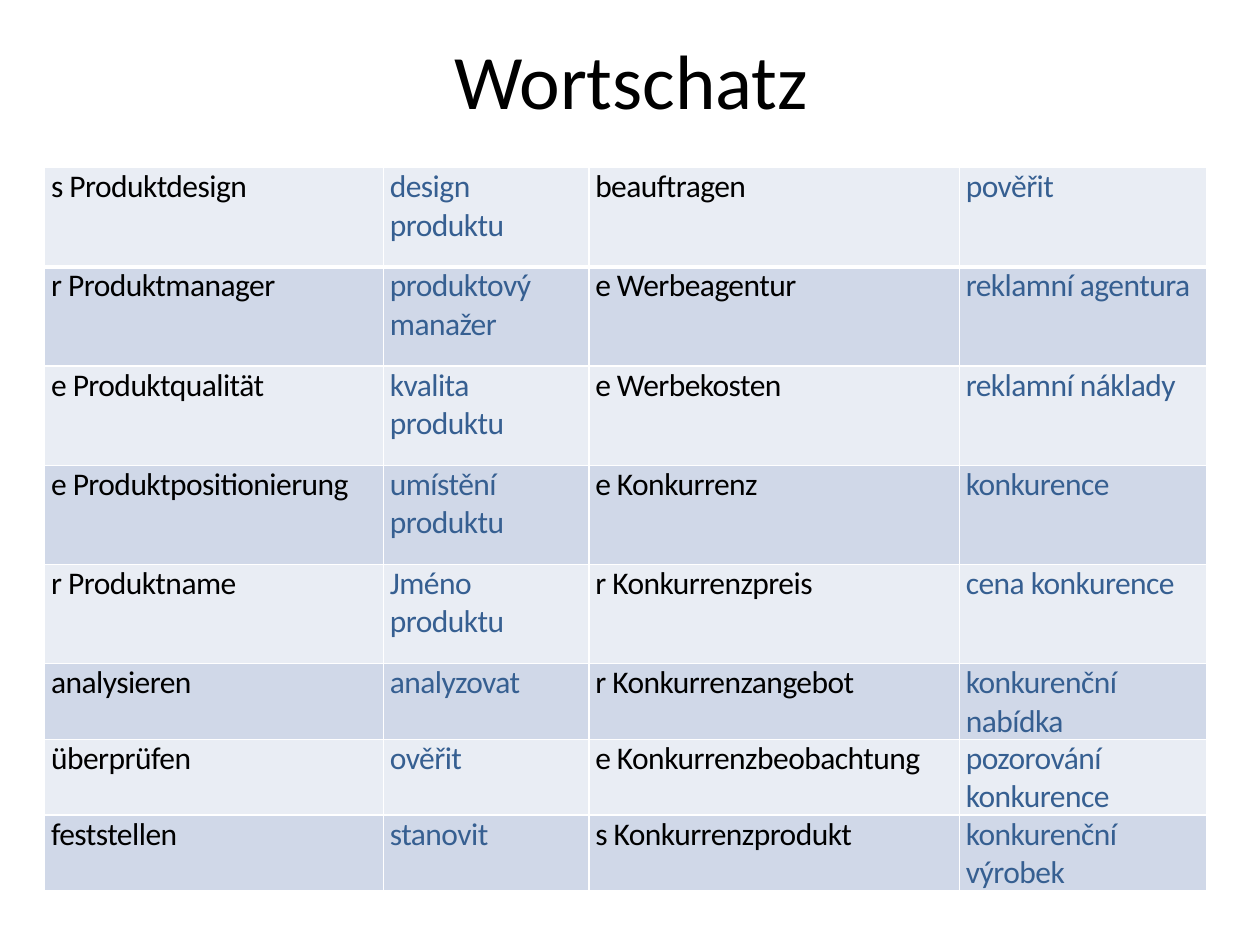
from lxml.etree import SubElement
from pptx import Presentation
from pptx.dml.color import RGBColor
from pptx.enum.text import MSO_ANCHOR, PP_ALIGN
from pptx.oxml.ns import qn
from pptx.util import Cm, Pt

BLACK = RGBColor(0x00, 0x00, 0x00)
BLUE = RGBColor(0x36, 0x5F, 0x91)
WHITE = RGBColor(0xFF, 0xFF, 0xFF)
LIGHT_BAND = RGBColor(0xE9, 0xED, 0xF4)
DARK_BAND = RGBColor(0xD0, 0xD8, 0xE8)
FONT = "Calibri"

COLUMN_WIDTHS = [6.83, 4.14, 7.47, 4.98]
ROW_HEIGHTS = [2] * 5 + [1.4] * 3
VOCABULARY = [
    ("s Produktdesign", "design produktu", "beauftragen", "pověřit"),
    ("r Produktmanager", "produktový manažer", "e Werbeagentur", "reklamní agentura"),
    ("e Produktqualität", "kvalita produktu", "e Werbekosten", "reklamní náklady"),
    ("e Produktpositionierung", "umístění produktu", "e Konkurrenz", "konkurence"),
    ("r Produktname", "Jméno produktu", "r Konkurrenzpreis", "cena konkurence"),
    ("analysieren", "analyzovat", "r Konkurrenzangebot", "konkurenční nabídka"),
    ("überprüfen", "ověřit", "e Konkurrenzbeobachtung", "pozorování konkurence"),
    ("feststellen", "stanovit", "s Konkurrenzprodukt", "konkurenční výrobek"),
]


def write_text(text_frame, text, size, color, alignment):
    text_frame.text = text
    paragraph = text_frame.paragraphs[0]
    paragraph.alignment = alignment
    font = paragraph.runs[0].font
    font.name, font.size, font.color.rgb = FONT, Pt(size), color


def add_title(slide, text, left, top, width, height):
    shape = slide.shapes.add_textbox(left, top, width, height)
    text_frame = shape.text_frame
    text_frame.word_wrap = True
    text_frame.vertical_anchor = MSO_ANCHOR.MIDDLE
    write_text(text_frame, text, 44, BLACK, PP_ALIGN.CENTER)


def set_borders(cell, top, bottom):
    """Draw white borders; top and bottom are widths in points."""
    properties = cell._tc.get_or_add_tcPr()
    for tag, width in (("a:lnL", 1), ("a:lnR", 1), ("a:lnT", top), ("a:lnB", bottom)):
        line = SubElement(properties, qn(tag), w=str(Pt(width)))
        fill = SubElement(line, qn("a:solidFill"))
        SubElement(fill, qn("a:srgbClr"), val=str(WHITE))


def format_cell(cell, text, row, column):
    cell.margin_left = cell.margin_right = Cm(0.13)
    cell.margin_top = cell.margin_bottom = 0
    set_borders(cell, top=3 if row == 1 else 1, bottom=3 if row == 0 else 1)
    cell.fill.solid()
    cell.fill.fore_color.rgb = DARK_BAND if row % 2 else LIGHT_BAND
    write_text(cell.text_frame, text, 18, BLUE if column % 2 else BLACK, PP_ALIGN.JUSTIFY)
    run = cell.text_frame.paragraphs[0].runs[0]
    run.font._element.set("spc", "-30")


def add_vocabulary_table(slide, left, top):
    shape = slide.shapes.add_table(
        len(VOCABULARY), len(COLUMN_WIDTHS), left, top,
        Cm(sum(COLUMN_WIDTHS)), Cm(sum(ROW_HEIGHTS)))
    table = shape.table
    table.first_row = False
    for column, width in zip(table.columns, COLUMN_WIDTHS):
        column.width = Cm(width)
    for row, height in zip(table.rows, ROW_HEIGHTS):
        row.height = Cm(height)
    for row, words in enumerate(VOCABULARY):
        for column, word in enumerate(words):
            format_cell(table.cell(row, column), word, row, column)


def main():
    presentation = Presentation()
    presentation.slide_width, presentation.slide_height = Cm(25.4), Cm(19.05)
    slide = presentation.slides.add_slide(presentation.slide_layouts[6])
    add_title(slide, "Wortschatz", Cm(1.3), Cm(0), Cm(22.86), Cm(3.18))
    add_vocabulary_table(slide, Cm(0.9), Cm(3.38))
    presentation.save("out.pptx")


if __name__ == "__main__":
    main()
